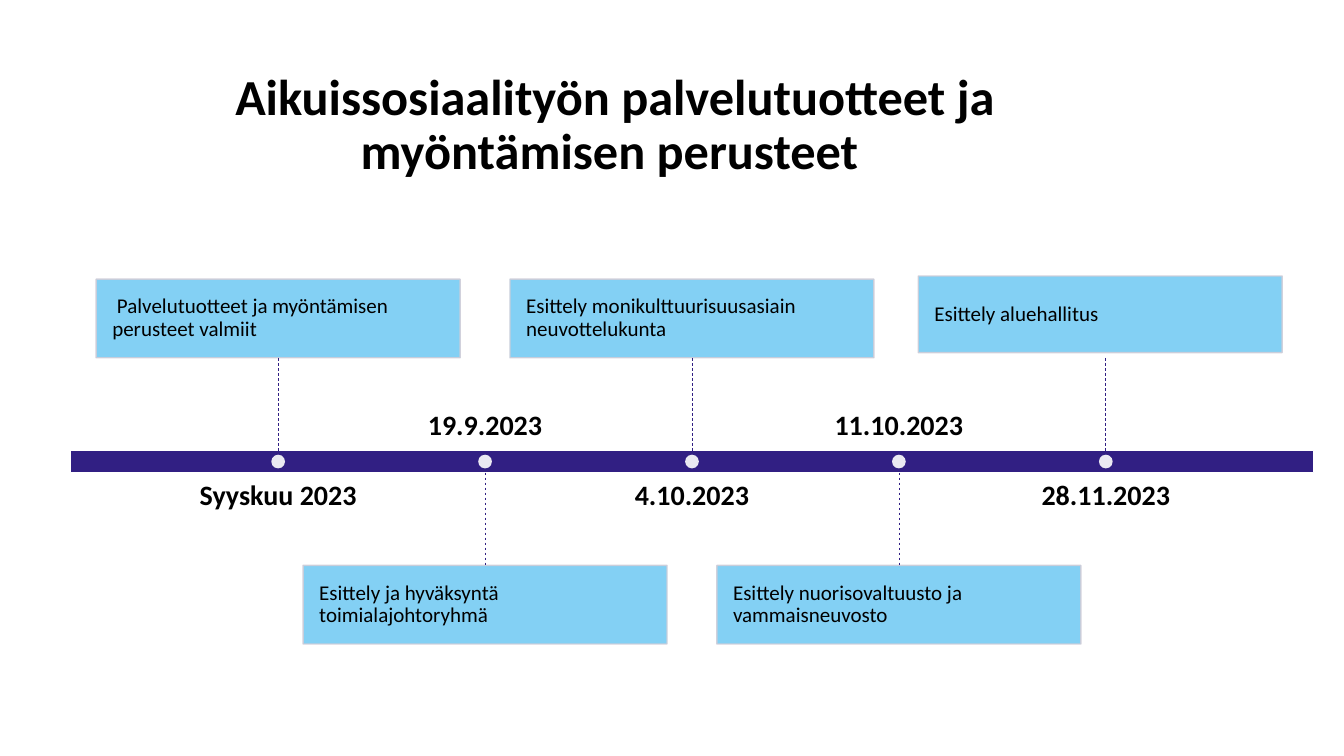
import dataclasses

import pptx
import pptx.dml.color
import pptx.enum.dml
import pptx.enum.shapes
import pptx.enum.text
import pptx.oxml.ns
import pptx.util
from lxml import etree

Pt = pptx.util.Pt
SHAPE = pptx.enum.shapes.MSO_SHAPE
ANCHOR = pptx.enum.text.MSO_ANCHOR
ALIGN = pptx.enum.text.PP_ALIGN

COLORS = {"text": "000000", "bar": "311F83", "box": "76CBF3",
          "border": "CECDD9", "white": "FFFFFF"}
FORMATS = {
    "title": {"name": "Calibri", "size": Pt(36), "bold": True},
    "date": {"name": "Calibri", "size": Pt(20), "bold": True},
    "box": {"name": "Calibri", "size": Pt(15), "bold": False},
}

# Timeline geometry in points
BAR_LEFT, BAR_TOP, BAR_W, BAR_H = 50.4, 321.8, 888, 15.8
FIRST_X, STEP = 198.7, 147.8
BOX_W, BOX_H, STEM = 260, 56.2, 66.2
DATE_W, DATE_H, DATE_GAP = 237, 44, 6.4
DOT = 9.8


@dataclasses.dataclass
class Milestone:
    date: str
    text: str
    dx: float = 0
    dy: float = 0
    height: float = BOX_H


MILESTONES = [
    Milestone("Syyskuu 2023", "\N{NO-BREAK SPACE}Palvelutuotteet ja myöntämisen perusteet valmiit"),
    Milestone("19.9.2023", "Esittely ja hyväksyntä toimialajohtoryhmä"),
    Milestone("4.10.2023", "Esittely monikulttuurisuusasiain neuvottelukunta"),
    Milestone("11.10.2023", "Esittely nuorisovaltuusto ja vammaisneuvosto"),
    Milestone("28.11.2023", "Esittely aluehallitus", dx=-4, dy=-2.2, height=54.7),
]


def rgb(name: str) -> pptx.dml.color.RGBColor:
    return pptx.dml.color.RGBColor.from_string(COLORS[name])


def write(sp, text: str, style: str, align, anchor, inset: float) -> None:
    tf = sp.text_frame
    frame = {"word_wrap": True, "vertical_anchor": anchor,
             "auto_size": pptx.enum.text.MSO_AUTO_SIZE.NONE}
    for side in ("left", "right", "top", "bottom"):
        frame[f"margin_{side}"] = Pt(inset)
    for key, value in frame.items():
        setattr(tf, key, value)
    p = tf.paragraphs[0]
    p.alignment, p.line_spacing = align, 0.9
    r = p.add_run()
    r.text = text
    for key, value in FORMATS[style].items():
        setattr(r.font, key, value)
    r.font.color.rgb = rgb("text")


def make_translucent(sp) -> None:
    for clr in sp._element.spPr.iter(pptx.oxml.ns.qn("a:srgbClr")):
        etree.SubElement(clr, pptx.oxml.ns.qn("a:alpha"), val="90000")


def add_shape(s, kind, left: float, top: float, width: float, height: float,
              fill: str, line: str = ""):
    sp = s.shapes.add_shape(kind, Pt(left), Pt(top), Pt(width), Pt(height))
    sp.shadow.inherit = False
    sp.fill.solid()
    sp.fill.fore_color.rgb = rgb(fill)
    if line:
        sp.line.color.rgb = rgb(line)
        sp.line.width = Pt(1)
    else:
        sp.line.fill.background()
    return sp


def add_stem(s, x: float, top: float) -> None:
    sp = s.shapes.add_connector(pptx.enum.shapes.MSO_CONNECTOR.STRAIGHT,
                                Pt(x), Pt(top), Pt(x), Pt(top + STEM))
    sp.line.color.rgb = rgb("bar")
    sp.line.width = Pt(0.5)
    sp.line.dash_style = pptx.enum.dml.MSO_LINE.DASH
    etree.SubElement(sp._element.spPr, pptx.oxml.ns.qn("a:effectLst"))


def add_milestone(s, item: Milestone, x: float, box_above: bool) -> None:
    bar_bottom = BAR_TOP + BAR_H
    if box_above:
        stem_top, box_top = BAR_TOP - STEM, BAR_TOP - STEM - BOX_H
        date_top, date_anchor = bar_bottom + DATE_GAP, ANCHOR.TOP
    else:
        stem_top, box_top = bar_bottom, bar_bottom + STEM
        date_top, date_anchor = BAR_TOP - DATE_GAP - DATE_H, ANCHOR.BOTTOM

    # Date on the opposite side of the bar
    sp = s.shapes.add_textbox(Pt(x - DATE_W / 2), Pt(date_top), Pt(DATE_W), Pt(DATE_H))
    write(sp, item.date, "date", ALIGN.CENTER, date_anchor, 0)

    # Description box, stem and dot
    sp = add_shape(s, SHAPE.RECTANGLE, x - BOX_W / 2 + item.dx, box_top + item.dy,
                   BOX_W, item.height, "box", "border")
    make_translucent(sp)
    write(sp, item.text, "box", ALIGN.LEFT, ANCHOR.MIDDLE, 11.5)
    add_stem(s, x, stem_top)
    dot_top = BAR_TOP + (BAR_H - DOT) / 2
    make_translucent(add_shape(s, SHAPE.OVAL, x - DOT / 2, dot_top, DOT, DOT, "white"))


def main() -> None:
    prs = pptx.Presentation()
    prs.slide_width, prs.slide_height = Pt(960), Pt(540)
    s = prs.slides.add_slide(prs.slide_layouts[5])

    # Title
    title = s.shapes.title
    place = {"left": 64, "top": -8, "width": 751, "height": 142}
    for key, value in place.items():
        setattr(title, key, Pt(value))
    write(title, "Aikuissosiaalityön palvelutuotteet ja myöntämisen perusteet\N{NO-BREAK SPACE}",
          "title", ALIGN.CENTER, ANCHOR.BOTTOM, 5)

    # Timeline
    add_shape(s, SHAPE.RECTANGLE, BAR_LEFT, BAR_TOP, BAR_W, BAR_H, "bar", "white")
    for i, item in enumerate(MILESTONES):
        add_milestone(s, item, FIRST_X + i * STEP, box_above=i % 2 == 0)

    prs.save("out.pptx")


if __name__ == "__main__":
    main()
